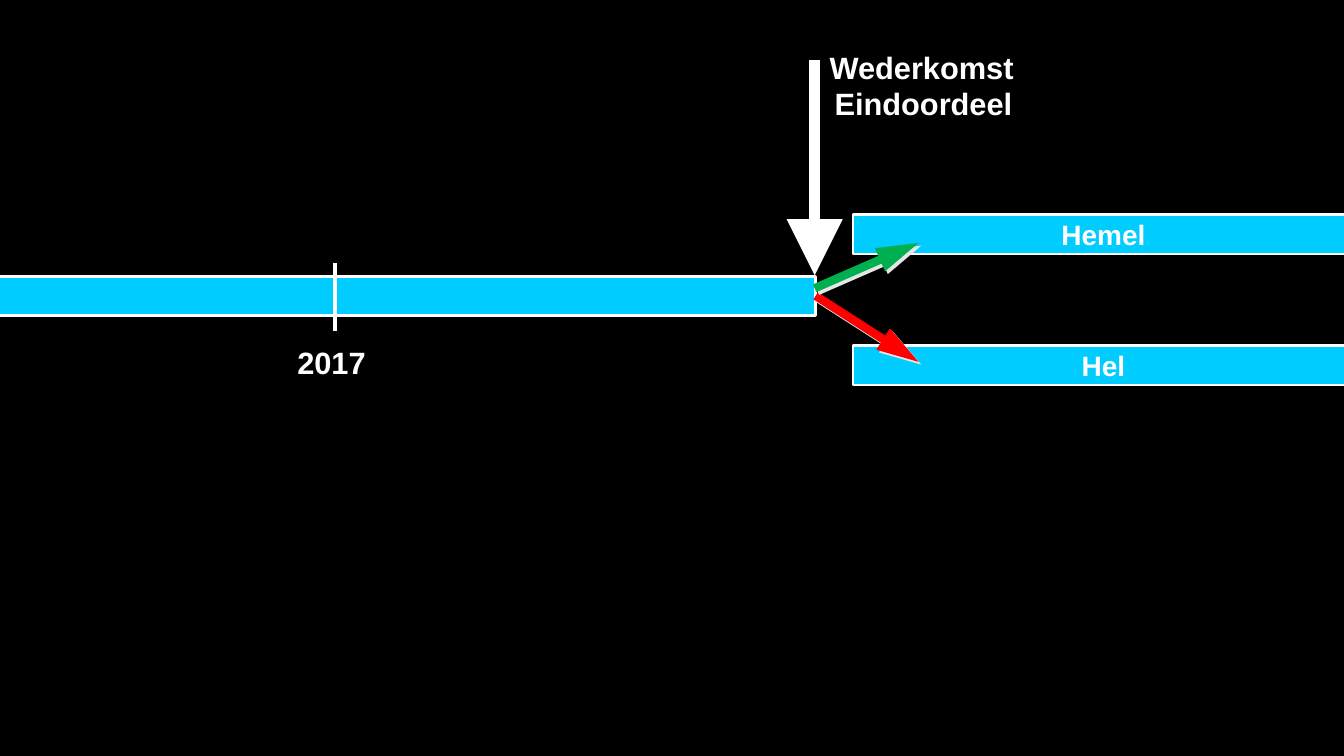
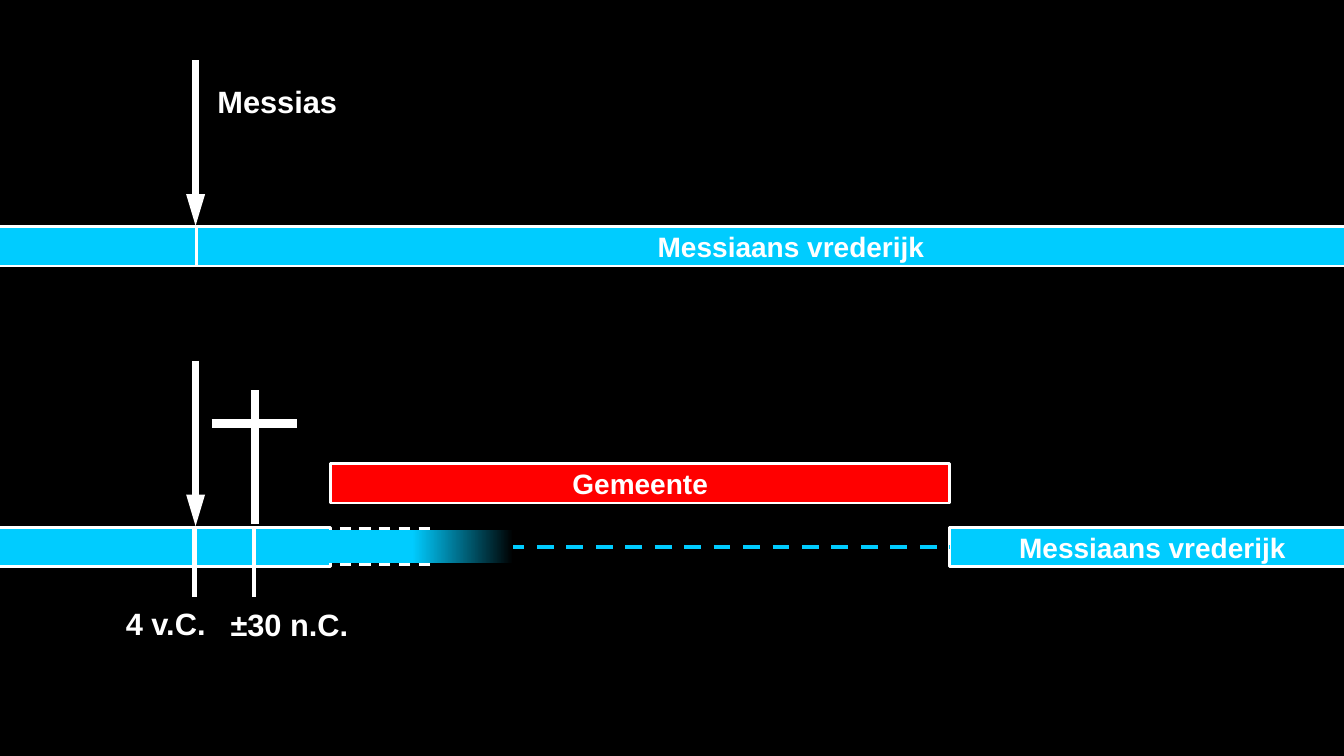
"""Builds two timeline slides about the end times and the Messianic kingdom."""
import pptx
import pptx.util
import pptx.dml.color
import pptx.enum.dml
import pptx.enum.shapes
import pptx.enum.text
import pptx.oxml

Inches = pptx.util.Inches
Pt = pptx.util.Pt
RGB = pptx.dml.color.RGBColor.from_string
Align = pptx.enum.text.PP_ALIGN
HEX = {"back": "000000", "text": "FFFFFF", "time": "00CCFF",
       "red": "FF0000", "green": "00B050", "shade": "E7E6E6"}
NS = 'xmlns:a="http://schemas.openxmlformats.org/drawingml/2006/main"'
BAR = 0.39


def box(slide, text, left, top, width, fill=None, mid=True, wrap=False):
    """Add a bar when a fill is given, otherwise a label."""
    if fill:
        shape = slide.shapes.add_shape(
            pptx.enum.shapes.MSO_SHAPE.RECTANGLE,
            Inches(left), Inches(top), Inches(width), Inches(BAR))
        shape.shadow.inherit = False
        shape.fill.solid()
        shape.fill.fore_color.rgb = RGB(HEX[fill])
        shape.line.color.rgb = RGB(HEX["text"])
        shape.line.width = Pt(2)
    else:
        shape = slide.shapes.add_textbox(
            Inches(left), Inches(top), Inches(width), Inches(0.47))
    if text:
        frame = shape.text_frame
        frame.word_wrap = wrap
        if fill:
            frame.vertical_anchor = pptx.enum.text.MSO_ANCHOR.MIDDLE
        else:
            frame.auto_size = pptx.enum.text.MSO_AUTO_SIZE.SHAPE_TO_FIT_TEXT
        para = frame.paragraphs[0]
        para.alignment = Align.CENTER if mid else Align.LEFT
        run = para.add_run()
        run.text = text
        run.font.name = "Arial"
        run.font.size = Pt(20 if fill else 22)
        run.font.bold = True
        run.font.color.rgb = RGB(HEX["text"])
    return shape


def line(host, start, end, width, color="text", dash=False, head=None, shade=False):
    """Add a straight line; head is the width class of an arrowhead."""
    link = host.shapes.add_connector(
        pptx.enum.shapes.MSO_CONNECTOR.STRAIGHT,
        *(Inches(value) for value in (*start, *end)))
    link.line.color.rgb = RGB(HEX[color])
    link.line.width = Pt(width)
    if dash:
        link.line.dash_style = pptx.enum.dml.MSO_LINE.DASH
    if head:
        link.line._get_or_add_ln().append(pptx.oxml.parse_xml(
            f'<a:tailEnd {NS} type="triangle" w="{head}" len="lg"/>'))
    cast = ""
    if shade:
        cast = (f'<a:outerShdw dist="{Pt(2.8)}" dir="2700000" algn="ctr" rotWithShape="0">'
                f'<a:srgbClr val="{HEX["shade"]}"/></a:outerShdw>')
    link._element.spPr.append(pptx.oxml.parse_xml(
        f'<a:effectLst {NS}>{cast}</a:effectLst>'))
    return link


prs = pptx.Presentation()
prs.slide_width = Inches(13.33)
prs.slide_height = Inches(7.5)
ground = prs.slide_master.background.fill
ground.solid()
ground.fore_color.rgb = RGB(HEX["back"])
blank = prs.slide_layouts[6]

slide = prs.slides.add_slide(blank)
age = box(slide, "", -0.18, 2.74, 8.27, "time")
line(slide, (3.32, 2.61), (3.32, 3.28), 3)
box(slide, "2017", 2.85, 3.36, 0.89, mid=False)
for name, top in (("Hemel", 2.13), ("Hel", 3.43)):
    box(slide, name, 8.46, top, 4.97, "time")
line(slide, (8.08, 0.6), (8.08, 2.73), 8, head="lg")
box(slide, "Wederkomst", 8.13, 0.43, 2.05, mid=False)
down = line(slide, (8.08, 2.95), (9.11, 3.59), 6, "red", head="med", shade=True)
down.begin_connect(age, 3)
box(slide, "Eindoordeel", 8.18, 0.79, 1.99, mid=False)
line(slide, (8.08, 2.86), (9.11, 2.41), 6, "green", head="med", shade=True)

slide = prs.slides.add_slide(blank)
for top in (2.25, 5.23):
    past = box(slide, "", -0.18, top, 3.46, "time")
    line(slide, (1.94, top - 1.65), (1.94, top - 0.01), 4.5, head="med")
box(slide, "Messiaans vrederijk", 1.95, 2.25, 11.79, "time")
realm = box(slide, "Messiaans vrederijk", 9.42, 5.23, 4.02, "time")
gap = line(slide, (3.28, 5.42), (9.42, 5.42), 3, "time", dash=True)
gap.begin_connect(past, 3)
gap.end_connect(realm, 1)

cross = slide.shapes.add_group_shape()
line(cross, (2.53, 3.87), (2.53, 5.2), 6)
line(cross, (2.1, 4.2), (2.95, 4.2), 6)

tail = slide.shapes.add_group_shape()
fade = tail.shapes.add_shape(
    pptx.enum.shapes.MSO_SHAPE.RECTANGLE,
    Inches(3.2), Inches(5.26), Inches(1.89), Inches(0.33))
fade.shadow.inherit = False
fade.line.fill.background()
fade.fill.gradient()
fade.fill.gradient_angle = 0
for stop, spot, color in zip(fade.fill.gradient_stops, (0.47, 1), ("time", "back")):
    stop.position = spot
    stop.color.rgb = RGB(HEX[color])
for y in (5.24, 5.6):
    line(tail, (3.37, y), (4.33, y), 2, dash=True)

for x in (1.93, 2.52):
    line(slide, (x, 5.23), (x, 5.92), 3)
box(slide, "4 v.C.", 1.15, 5.95, 1, mid=False)
box(slide, "±30 n.C.", 2.15, 5.96, 1.44, wrap=True)
box(slide, "Gemeente", 3.28, 4.6, 6.14, "red")
box(slide, "Messias", 2.03, 0.77, 1.44, wrap=True)

prs.save("out.pptx")
